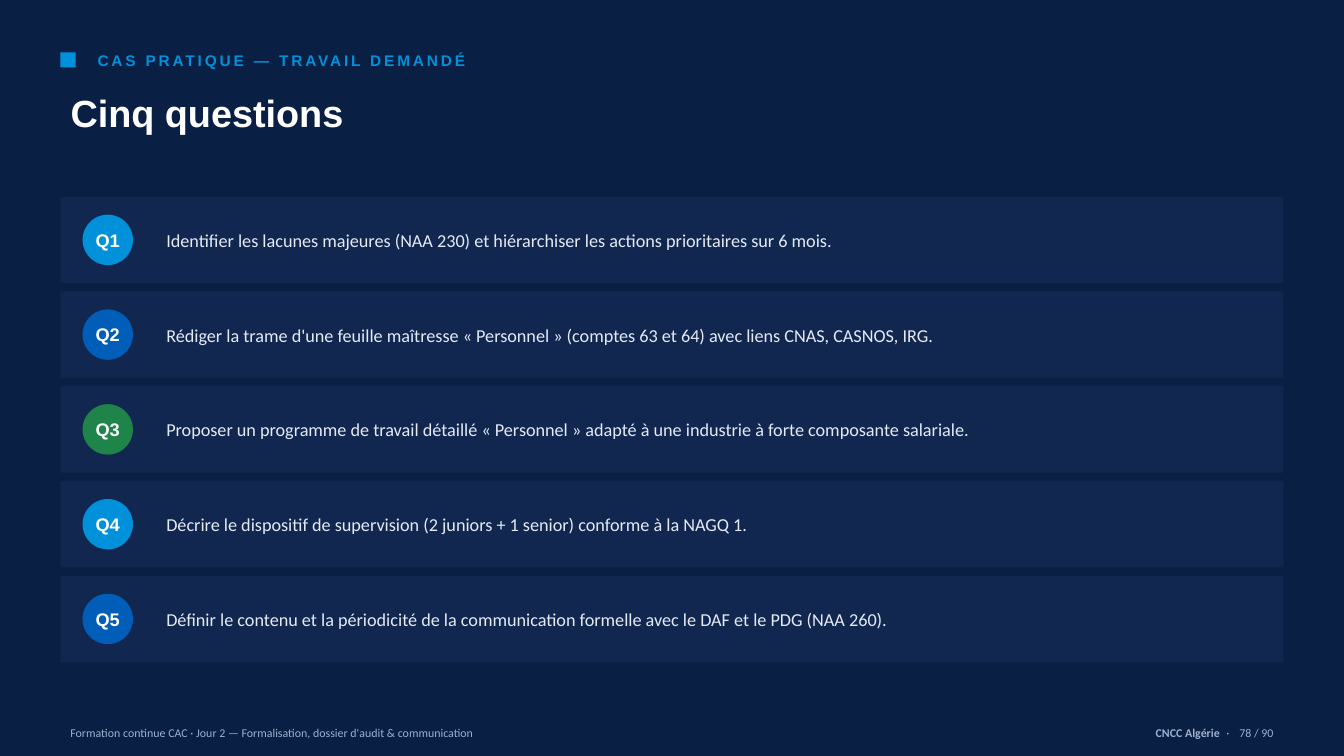
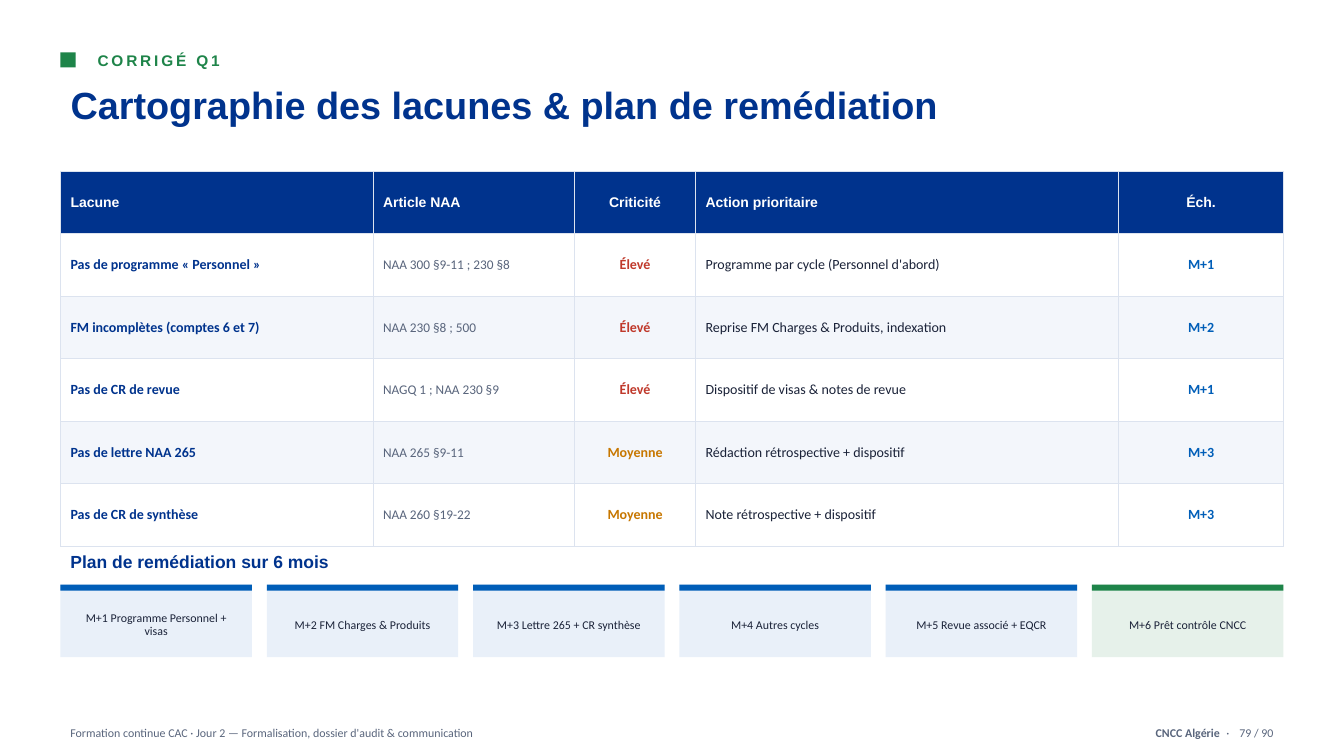
from pptx import Presentation
from pptx.dml.color import RGBColor
from pptx.enum.shapes import MSO_SHAPE
from pptx.enum.text import MSO_ANCHOR, MSO_AUTO_SIZE, PP_ALIGN
from pptx.oxml.ns import qn
from pptx.util import Pt
from lxml import etree

LEFT, CENTER, RIGHT = PP_ALIGN.LEFT, PP_ALIGN.CENTER, PP_ALIGN.RIGHT
TOP, MIDDLE = MSO_ANCHOR.TOP, MSO_ANCHOR.MIDDLE
RECT, OVAL = MSO_SHAPE.RECTANGLE, MSO_SHAPE.OVAL

NIGHT = RGBColor(0x0A, 0x1F, 0x44)
NIGHT_CARD = RGBColor(0x12, 0x27, 0x4F)
NIGHT_TEXT = RGBColor(0xE4, 0xEA, 0xF6)
NIGHT_MUTED = RGBColor(0x9F, 0xB0, 0xCE)
WHITE = RGBColor(0xFF, 0xFF, 0xFF)
NAVY = RGBColor(0x00, 0x33, 0x8D)
BLUE = RGBColor(0x00, 0x5E, 0xB8)
SKY = RGBColor(0x00, 0x91, 0xDA)
GREEN = RGBColor(0x1E, 0x84, 0x49)
RED = RGBColor(0xC0, 0x39, 0x2B)
AMBER = RGBColor(0xC7, 0x77, 0x00)
INK = RGBColor(0x1A, 0x22, 0x38)
MUTED = RGBColor(0x59, 0x65, 0x7C)
STRIPE = RGBColor(0xF3, 0xF6, 0xFB)
BORDER = RGBColor(0xDC, 0xE3, 0xEF)
BLUE_TINT = RGBColor(0xE9, 0xF0, 0xF9)
GREEN_TINT = RGBColor(0xE6, 0xF1, 0xEA)

HEAD, BODY = "Arial", "Calibri"
PAGE_W, PAGE_H = 960, 540
MARGIN = 43.2
CONTENT_W = PAGE_W - 2 * MARGIN
PAGES = 90
COURSE = "Formation continue CAC · Jour 2 — Formalisation, dossier d'audit & communication"

QUESTIONS = [
    ("Identifier les lacunes majeures (NAA 230) et hiérarchiser les actions "
     "prioritaires sur 6 mois.", SKY),
    ("Rédiger la trame d'une feuille maîtresse « Personnel » (comptes 63 et 64) "
     "avec liens CNAS, CASNOS, IRG.", BLUE),
    ("Proposer un programme de travail détaillé « Personnel » adapté à une "
     "industrie à forte composante salariale.", GREEN),
    ("Décrire le dispositif de supervision (2 juniors + 1 senior) conforme à la "
     "NAGQ 1.", SKY),
    ("Définir le contenu et la périodicité de la communication formelle avec le "
     "DAF et le PDG (NAA 260).", BLUE),
]
GAPS = [
    ("Lacune", "Article NAA", "Criticité", "Action prioritaire", "Éch."),
    ("Pas de programme « Personnel »", "NAA 300 §9-11 ; 230 §8", "Élevé",
     "Programme par cycle (Personnel d'abord)", "M+1"),
    ("FM incomplètes (comptes 6 et 7)", "NAA 230 §8 ; 500", "Élevé",
     "Reprise FM Charges & Produits, indexation", "M+2"),
    ("Pas de CR de revue", "NAGQ 1 ; NAA 230 §9", "Élevé",
     "Dispositif de visas & notes de revue", "M+1"),
    ("Pas de lettre NAA 265", "NAA 265 §9-11", "Moyenne",
     "Rédaction rétrospective + dispositif", "M+3"),
    ("Pas de CR de synthèse", "NAA 260 §19-22", "Moyenne",
     "Note rétrospective + dispositif", "M+3"),
]
SEVERITY = {"Élevé": RED, "Moyenne": AMBER}
# Width, alignment and text format of each table column
COLUMNS = [
    (223.2, LEFT, dict(size=10, color=NAVY, bold=True)),
    (144, LEFT, dict(size=9.5, color=MUTED)),
    (86.4, CENTER, dict(size=10, bold=True)),
    (302.4, LEFT, dict(size=10, color=INK)),
    (117.6, CENTER, dict(size=10, color=BLUE, bold=True)),
]
STEPS = ["M+1 Programme Personnel + visas", "M+2 FM Charges & Produits",
         "M+3 Lettre 265 + CR synthèse", "M+4 Autres cycles",
         "M+5 Revue associé + EQCR", "M+6 Prêt contrôle CNCC"]


def add_run(p, text, size, color, name=BODY, bold=False, tracking=0):
    r = p.add_run()
    r.text = text
    for key, value in dict(name=name, size=Pt(size), bold=bold).items():
        setattr(r.font, key, value)
    r.font.color.rgb = color
    if tracking:
        r._r.get_or_add_rPr().set("spc", str(int(tracking * 100)))


def write(tf, text, align=LEFT, anchor=MIDDLE, spacing=1.0, insets=None, **fmt):
    """Fill a frame with one paragraph; insets maps margin sides to points."""
    frame = dict(word_wrap=True, auto_size=MSO_AUTO_SIZE.NONE, vertical_anchor=anchor)
    for side, value in (insets or {}).items():
        frame["margin_" + side] = Pt(value)
    for key, value in frame.items():
        setattr(tf, key, value)
    p = tf.paragraphs[0]
    p.alignment, p.line_spacing = align, spacing
    add_run(p, text, **fmt)
    return p


def add_text(s, box, text, **fmt):
    tf = s.shapes.add_textbox(*map(Pt, box)).text_frame
    return write(tf, text, **fmt)


def add_block(s, kind, box, color):
    sp = s.shapes.add_shape(kind, *map(Pt, box))
    sp.shadow.inherit = False
    sp.fill.solid()
    sp.fill.fore_color.rgb = color
    sp.line.fill.background()
    return sp


def add_header(s, box, tag, title, accent, color, title_anchor):
    x, y, w, h = box
    add_block(s, RECT, (x, y + 4.3, 10.8, 10.8), accent)
    add_text(s, (x + 19.4, y, w - 19.4, 20.2), tag, size=11, color=accent,
             name=HEAD, bold=True, tracking=2)
    sp = s.shapes.title
    placement = dict(left=x, top=y + 23, width=w, height=h - 23)
    for key, value in placement.items():
        setattr(sp, key, Pt(value))
    write(sp.text_frame, title, anchor=title_anchor, spacing=0.98, size=27,
          color=color, name=HEAD, bold=True)


def add_footer(s, box, page, color):
    x, y, w, h = box
    add_text(s, (x, y, 684, h), COURSE, size=8.5, color=color)
    p = add_text(s, (x + w - 223.2, y, 223.2, h), "CNCC Algérie", align=RIGHT,
                 size=8.5, color=color, bold=True)
    add_run(p, " · ", 8.5, color, tracking=2.6)
    add_run(p, f"{page} / {PAGES}", 8.5, color)


def new_slide(prs, background, page, footer_color, header_h, **header):
    s = prs.slides.add_slide(prs.slide_layouts[5])
    s.background.fill.solid()
    s.background.fill.fore_color.rgb = background
    add_header(s, (MARGIN, 33.1, CONTENT_W, header_h), **header)
    add_footer(s, (MARGIN, 512.6, CONTENT_W, 21.6), page, footer_color)
    return s


def add_question(s, box, label, text, color):
    x, y, w, h = box
    card = add_block(s, RECT, box, NIGHT_CARD)
    write(card.text_frame, text, spacing=1.02, insets=dict(left=75.6, right=25.2),
          size=13, color=NIGHT_TEXT)
    badge = add_block(s, OVAL, (x + 15.8, y + (h - 36) / 2, 36, 36), color)
    write(badge.text_frame, label, align=CENTER, insets=dict(left=0, right=0),
          size=13, color=WHITE, name=HEAD, bold=True)


def add_borders(cell, color, width):
    tcPr = cell._tc.get_or_add_tcPr()
    for side in ("lnL", "lnR", "lnT", "lnB"):
        ln = etree.SubElement(tcPr, qn("a:" + side), w=str(Pt(width)))
        fill = etree.SubElement(ln, qn("a:solidFill"))
        etree.SubElement(fill, qn("a:srgbClr"), val=str(color))


def add_gap_table(s, box):
    table = s.shapes.add_table(len(GAPS), len(COLUMNS), *map(Pt, box)).table
    table.horz_banding = False
    for column, (width, _, _) in zip(table.columns, COLUMNS):
        column.width = Pt(width)
    for i, texts in enumerate(GAPS):
        for j, (text, (_, align, fmt)) in enumerate(zip(texts, COLUMNS)):
            cell = table.cell(i, j)
            add_borders(cell, BORDER, 0.75)
            cell.fill.solid()
            if i == 0:
                fill = NAVY
                fmt = dict(size=10, color=WHITE, name=HEAD, bold=True)
            else:
                fill = WHITE if i % 2 else STRIPE
                if text in SEVERITY:
                    fmt = dict(fmt, color=SEVERITY[text])
            cell.fill.fore_color.rgb = fill
            cell.vertical_anchor = MIDDLE
            p = cell.text_frame.paragraphs[0]
            p.alignment = align
            add_run(p, text, **fmt)


def add_step(s, box, text, tint, accent):
    x, y, w, _ = box
    card = add_block(s, RECT, box, tint)
    write(card.text_frame, text, align=CENTER, spacing=0.95,
          insets=dict(left=11.5, right=11.5, top=9.4), size=8.5, color=INK)
    add_block(s, RECT, (x, y, w, 4.3), accent)


def add_plan(s, box):
    x, y, w, h = box
    add_text(s, (x, y, w, 25.2), "Plan de remédiation sur 6 mois", size=12.5,
             color=NAVY, name=HEAD, bold=True)
    step_w = 136.8
    pitch = (w - step_w) / (len(STEPS) - 1)
    for i, text in enumerate(STEPS):
        last = i == len(STEPS) - 1
        tint, accent = (GREEN_TINT, GREEN) if last else (BLUE_TINT, BLUE)
        add_step(s, (x + i * pitch, y + 28.8, step_w, h - 28.8), text, tint, accent)


def questions_slide(prs):
    s = new_slide(prs, NIGHT, 78, NIGHT_MUTED, 73.4, accent=SKY, color=WHITE,
                  tag="CAS PRATIQUE — TRAVAIL DEMANDÉ", title="Cinq questions",
                  title_anchor=MIDDLE)
    for i, (text, color) in enumerate(QUESTIONS):
        add_question(s, (MARGIN, 140.4 + i * 67.7, CONTENT_W, 61.9),
                     f"Q{i + 1}", text, color)


def answer_slide(prs):
    s = new_slide(prs, WHITE, 79, MUTED, 91.4, accent=GREEN, color=NAVY,
                  tag="CORRIGÉ Q1", title_anchor=TOP,
                  title="Cartographie des lacunes & plan de remédiation")
    add_gap_table(s, (MARGIN, 122.4, CONTENT_W, 267.84))
    add_plan(s, (MARGIN, 388.8, CONTENT_W, 80.6))


def main():
    prs = Presentation()
    prs.slide_width, prs.slide_height = Pt(PAGE_W), Pt(PAGE_H)
    questions_slide(prs)
    answer_slide(prs)
    prs.save("out.pptx")


if __name__ == "__main__":
    main()
